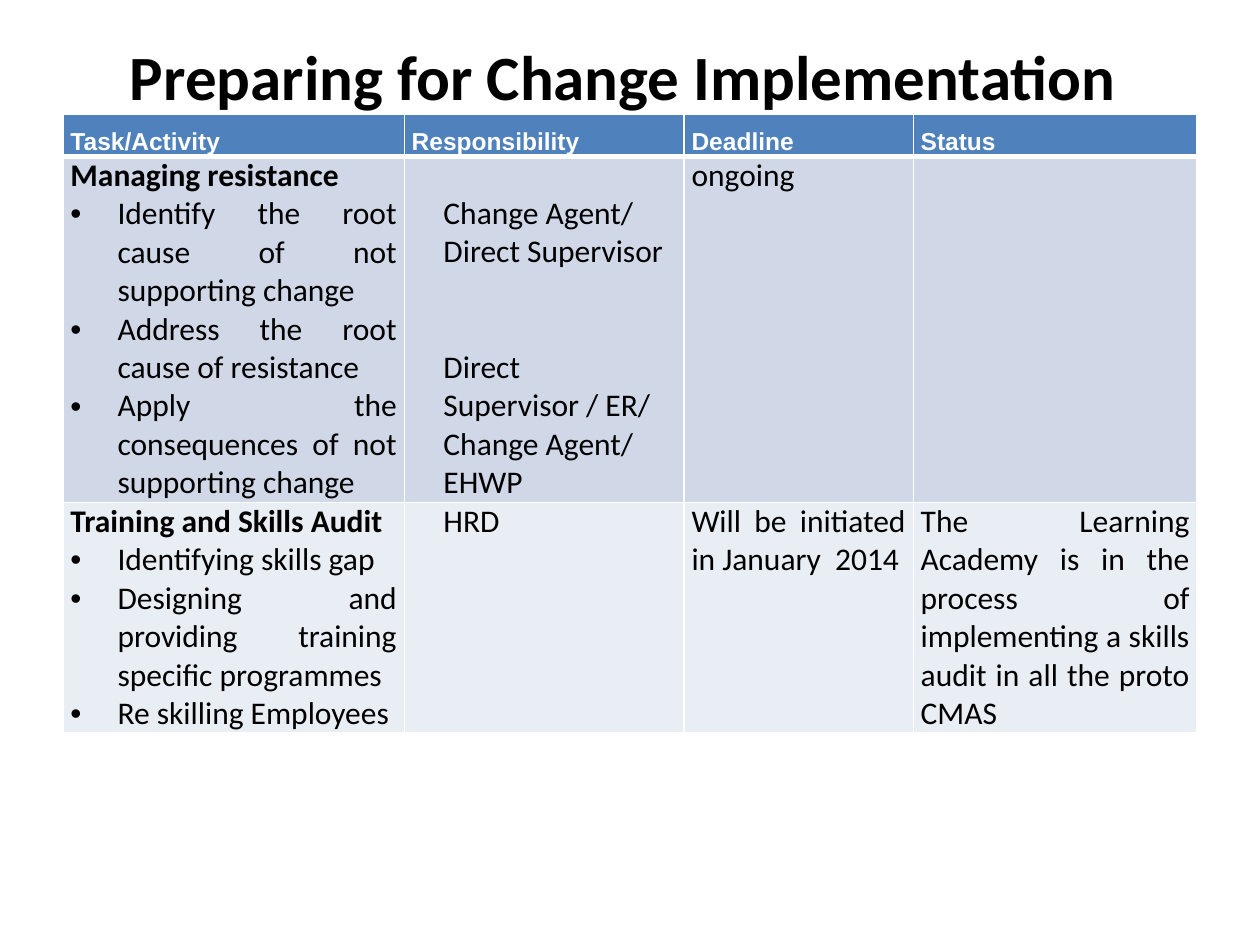
from lxml.etree import SubElement
from pptx import Presentation
from pptx.dml.color import RGBColor
from pptx.enum.text import MSO_ANCHOR, PP_ALIGN
from pptx.oxml.ns import qn
from pptx.util import Cm, Pt

HUES = {"head": "4F81BD", "odd": "D0D8E8", "even": "E9EDF4",
        "line": "FFFFFF", "ink": "000000", "pale": "FFFFFF"}
JUST, LEFT = PP_ALIGN.JUSTIFY, PP_ALIGN.LEFT


def write(para, text, size=18, face="Calibri", hue="ink", bold=False,
          align=JUST, indent=0, bullet=False, lines=None, before=None):
    props = para._p.get_or_add_pPr()
    if bullet:
        indent = 0.95
        props.set("indent", str(-Cm(indent)))
        SubElement(props, qn("a:buFont"), typeface="Arial")
        SubElement(props, qn("a:buChar"), char="•")
    props.set("marL", str(Cm(indent)))
    para.alignment = align
    if lines:
        para.line_spacing = lines
    if before:
        para.space_before = Pt(before)
    run = para.add_run()
    run.text = text
    font = run.font
    font.size, font.name, font.bold = Pt(size), face, bold
    font.color.rgb = RGBColor.from_string(HUES[hue])


# Slide
deck = Presentation()
deck.slide_width, deck.slide_height = Cm(25.4), Cm(19.05)
slide = deck.slides.add_slide(deck.slide_layouts[5])

# Title, at the top of its box so that it clears the table
title = slide.shapes.title
title.left, title.top = Cm(1.27), Cm(0.76)
title.width, title.height = Cm(22.86), Cm(3.18)
frame = title.text_frame
frame.vertical_anchor = MSO_ANCHOR.TOP
frame.margin_top, frame.margin_right = 0, Cm(0.54)
write(frame.paragraphs[0], "Preparing for Change Implementation",
      size=36, bold=True, align=PP_ALIGN.CENTER)

# Cell text: each cell is a list of (text, format) paragraphs
HEAD = dict(size=14, face="Arial", hue="pale", bold=True, lines=1.5)
BOLD, ITEM = dict(bold=True), dict(bullet=True)
ROLE = dict(indent=0.64, align=LEFT)
rows = [
    [[(name, HEAD)] for name in
     ("Task/Activity", "Responsibility", "Deadline", "Status")],
    [[("Managing resistance", BOLD),
      ("Identify the root cause of not supporting change", ITEM),
      ("Address the root cause of resistance", ITEM),
      ("Apply the consequences of not supporting change", ITEM)],
     [("Change Agent/", ROLE),
      ("Direct Supervisor", ROLE),
      ("Direct Supervisor / ER/ Change Agent/ EHWP", dict(ROLE, before=44))],
     [("ongoing", dict(align=LEFT))],
     []],
    [[("Training and Skills Audit", BOLD),
      ("Identifying skills gap", ITEM),
      ("Designing and providing training specific programmes", ITEM),
      ("Re skilling Employees", ITEM)],
     [("HRD", dict(indent=0.64))],
     [("Will be initiated in January  2014", {})],
     [("The Learning Academy is in the process of implementing "
       "a skills audit in all the proto CMAS", {})]],
]

# Table
wide, high = (6.88, 5.64, 4.62, 5.72), (0.84, 6.95, 4.65)
grid = slide.shapes.add_table(3, 4, Cm(1.27), Cm(2.31),
                              Cm(sum(wide)), Cm(sum(high))).table
for col, size in zip(grid.columns, wide):
    col.width = Cm(size)
for row, size in zip(grid.rows, high):
    row.height = Cm(size)

for r, (row, fill) in enumerate(zip(rows, ("head", "odd", "even"))):
    for c, paras in enumerate(row):
        cell = grid.cell(r, c)
        cell.margin_left = cell.margin_right = Cm(0.15)
        cell.margin_top = cell.margin_bottom = 0
        # White borders, thicker under the header
        for side in "LRTB":
            thick = 3 if (r, side) in ((0, "B"), (1, "T")) else 1
            line = SubElement(cell._tc.get_or_add_tcPr(), qn("a:ln" + side),
                              w=str(Pt(thick)))
            SubElement(SubElement(line, qn("a:solidFill")),
                       qn("a:srgbClr"), val=HUES["line"])
        cell.fill.solid()
        cell.fill.fore_color.rgb = RGBColor.from_string(HUES[fill])
        for n, (text, form) in enumerate(paras):
            body = cell.text_frame
            write(body.add_paragraph() if n else body.paragraphs[0],
                  text, **form)

# Roles start level with the first bullet
grid.cell(1, 1).margin_top = Cm(0.77)

deck.save("out.pptx")
